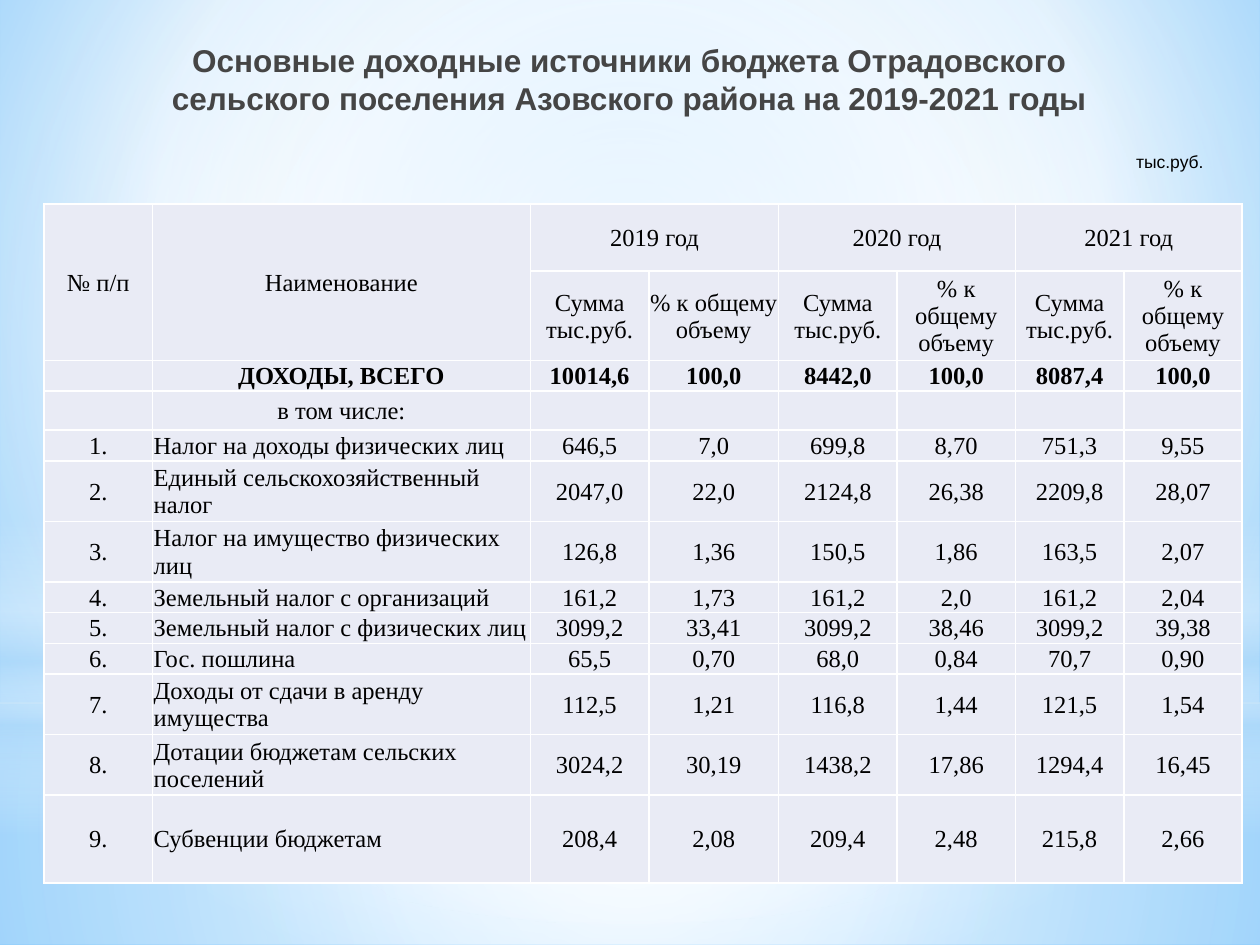
import pptx
import pptx.dml.color
import pptx.enum.shapes
import pptx.enum.text
import pptx.oxml
import pptx.oxml.ns
import pptx.util

# Content
TITLE = ("Основные доходные источники бюджета Отрадовского сельского поселения "
         "Азовского района на 2019-2021 годы")
UNIT = "тыс.руб."
YEARS = ["2019 год", "2020 год", "2021 год"]
MEASURES = ["Сумма тыс.руб.", "% к общему объему"]
TOTAL = ["ДОХОДЫ, ВСЕГО", "10014,6", "100,0", "8442,0", "100,0", "8087,4", "100,0"]
INCLUDING = "в том числе:"
SOURCES = [
    ["Налог на доходы физических лиц", "646,5", "7,0", "699,8", "8,70", "751,3", "9,55"],
    ["Единый сельскохозяйственный налог", "2047,0", "22,0", "2124,8", "26,38", "2209,8", "28,07"],
    ["Налог на имущество физических лиц", "126,8", "1,36", "150,5", "1,86", "163,5", "2,07"],
    ["Земельный налог с организаций", "161,2", "1,73", "161,2", "2,0", "161,2", "2,04"],
    ["Земельный налог с физических лиц", "3099,2", "33,41", "3099,2", "38,46", "3099,2", "39,38"],
    ["Гос. пошлина", "65,5", "0,70", "68,0", "0,84", "70,7", "0,90"],
    ["Доходы от сдачи в аренду имущества", "112,5", "1,21", "116,8", "1,44", "121,5", "1,54"],
    ["Дотации бюджетам сельских поселений", "3024,2", "30,19", "1438,2", "17,86", "1294,4", "16,45"],
    ["Субвенции бюджетам", "208,4", "2,08", "209,4", "2,48", "215,8", "2,66"],
]

THEME = {
    "title": {"name": "Arial", "size": 18, "bold": True, "color": "454545"},
    "unit": {"name": "Arial", "size": 10, "bold": False, "color": "000000"},
    "body": {"name": "Times New Roman", "size": 14, "bold": False, "color": "000000"},
    "cell": "E9EBF5",
    "border": "FFFFFF",
    "backdrop": [(0, "9ED5FF", 100), (60, "FFFFFF", 100), (100, "5BB9FF", 100)],
    "floor": [(0, "FFFFFF", 91), (37, "FFFFFF", 76), (100, "B4DCFA", 79)],
    "sky": [(0, "FFFFFF", 89), (48, "FFFFFF", 62), (100, "B4DCFA", 79)],
    "horizon": [(0, "FFFFFF", 0), (29, "FFFFFF", 30), (45, "B4DCFA", 40),
                (55, "FFFFFF", 26), (65, "B4DCFA", 60), (100, "FFFFFF", 0)],
    "glow": [(0, "FFFFFF", 100), (56, "FFFFFF", 0)],
}

# Layout: boxes in percent of the slide, table grid in inches
WIDTH, HEIGHT = 10, 7.5
TITLE_BOX = (12.1, 3.73, 75.7, 16.67)
UNIT_BOX = (79.2, 15.33, 17.3, 3.6)
TABLE_CORNER = (3.5, 21.6)
COLUMNS = [0.86, 3, 0.94, 1.03, 0.94, 0.94, 0.86, 0.94]
LINE, TWO_LINES = 0.24, 0.48
ROWS = [0.53, 0.71, LINE, 0.31, LINE, TWO_LINES, TWO_LINES, LINE, LINE, LINE,
        TWO_LINES, TWO_LINES, 0.7]
CENTRE_FOCUS = (50, 50, 50, 50)
SHAPES = pptx.enum.shapes.MSO_SHAPE
LAYERS = [
    ("floor", SHAPES.RECTANGLE, (0, 74.4, 100, 25.6), CENTRE_FOCUS),
    ("sky", SHAPES.RECTANGLE, (0, 0, 100, 74.4), CENTRE_FOCUS),
    ("horizon", SHAPES.RECTANGLE, (0, 55, 100, 33.33), None),
    ("glow", SHAPES.OVAL, (0, 23.33, 100, 74.4), CENTRE_FOCUS),
]
ALIGN = pptx.enum.text.PP_ALIGN
NS = pptx.oxml.ns.nsdecls("a")


def place(box):
    sides = (WIDTH, HEIGHT) * 2
    return [pptx.util.Inches(share * side / 100) for share, side in zip(box, sides)]


def rgb(value):
    return pptx.dml.color.RGBColor.from_string(value)


def set_gradient(fill, owner, stops, focus):
    """Swap a solid fill for a radial gradient, or a vertical one without focus."""
    fill.solid()
    fill.fore_color.rgb = rgb(stops[0][1])
    marks = "".join(
        f'<a:gs pos="{at * 1000}"><a:srgbClr val="{color}">'
        f'<a:alpha val="{opacity * 1000}"/></a:srgbClr></a:gs>'
        for at, color, opacity in stops)
    direction = '<a:lin ang="5400000" scaled="0"/>'
    if focus:
        rect = " ".join(f'{side}="{v * 1000}"' for side, v in zip("ltrb", focus))
        direction = f'<a:path path="circle"><a:fillToRect {rect}/></a:path>'
    solid = owner.find(".//" + pptx.oxml.ns.qn("a:solidFill"))
    solid.getparent().replace(solid, pptx.oxml.parse_xml(
        f'<a:gradFill {NS} rotWithShape="1"><a:gsLst>{marks}</a:gsLst>{direction}</a:gradFill>'))


def write(frame, text, style, align):
    paragraph = frame.paragraphs[0]
    paragraph.alignment = align
    if not text:
        paragraph._p.append(pptx.oxml.parse_xml(
            f'<a:endParaRPr {NS} sz="{style["size"] * 100}"/>'))
        return
    run = paragraph.add_run()
    run.text = text
    formats = {"name": style["name"], "size": pptx.util.Pt(style["size"]),
               "bold": style["bold"]}
    for attribute, value in formats.items():
        setattr(run.font, attribute, value)
    run.font.color.rgb = rgb(style["color"])


def add_label(slide, box, text, style, align):
    frame = slide.shapes.add_textbox(*place(box)).text_frame
    frame.word_wrap = True
    write(frame, text, style, align)


def fill_cell(cell, text, style, align):
    formats = {"margin_left": 0.01, "margin_right": 0.01, "margin_top": 0.01, "margin_bottom": 0}
    for attribute, value in formats.items():
        setattr(cell, attribute, pptx.util.Inches(value))
    cell.vertical_anchor = pptx.enum.text.MSO_ANCHOR.MIDDLE
    cell.fill.solid()
    cell.fill.fore_color.rgb = rgb(THEME["cell"])
    for index, side in enumerate("LRTB"):
        cell._tc.tcPr.insert(index, pptx.oxml.parse_xml(
            f'<a:ln{side} {NS} w="12700"><a:solidFill><a:srgbClr val="{THEME["border"]}"/>'
            f'</a:solidFill></a:ln{side}>'))
    write(cell.text_frame, text, style, align)


def add_income_table(slide):
    year_row = ["№ п/п", "Наименование"]
    for year in YEARS:
        year_row += [year, ""]
    lines = [year_row, ["", ""] + MEASURES * len(YEARS), [""] + TOTAL,
             ["", INCLUDING] + [""] * len(YEARS) * len(MEASURES)]
    first_source = len(lines)
    total_row = first_source - 2
    lines += [[f"{number}."] + source for number, source in enumerate(SOURCES, 1)]

    size = [pptx.util.Inches(sum(lengths)) for lengths in (COLUMNS, ROWS)]
    table = slide.shapes.add_table(
        len(ROWS), len(COLUMNS), *place(TABLE_CORNER), *size).table
    table.first_row = table.horz_banding = False
    for column, width in zip(table.columns, COLUMNS):
        column.width = pptx.util.Inches(width)
    for row, height in zip(table.rows, ROWS):
        row.height = pptx.util.Inches(height)

    for r, line in enumerate(lines):
        style = {**THEME["body"], "bold": r == total_row}
        for c, text in enumerate(line):
            is_source_name = r >= first_source and c == 1
            fill_cell(table.cell(r, c), text, style,
                      ALIGN.LEFT if is_source_name else ALIGN.CENTER)

    # Headings: two tall cells, then one wide cell per year
    for c in range(2):
        table.cell(0, c).merge(table.cell(1, c))
    for c in range(2, len(COLUMNS), len(MEASURES)):
        table.cell(0, c).merge(table.cell(0, c + 1))


def main():
    deck = pptx.Presentation()
    deck.slide_width = pptx.util.Inches(WIDTH)
    deck.slide_height = pptx.util.Inches(HEIGHT)
    slide = deck.slides.add_slide(deck.slide_layouts[6])

    # Backdrop and its translucent layers
    set_gradient(slide.background.fill, slide.element, THEME["backdrop"], (20, 10, 20, 60))
    for name, kind, box, focus in LAYERS:
        layer = slide.shapes.add_shape(kind, *place(box))
        layer.shadow.inherit = False
        layer.line.fill.background()
        set_gradient(layer.fill, layer.element, THEME[name], focus)

    # Heading, unit and table
    add_label(slide, TITLE_BOX, TITLE, THEME["title"], ALIGN.CENTER)
    add_label(slide, UNIT_BOX, UNIT, THEME["unit"], ALIGN.RIGHT)
    add_income_table(slide)
    deck.save("out.pptx")


if __name__ == "__main__":
    main()
